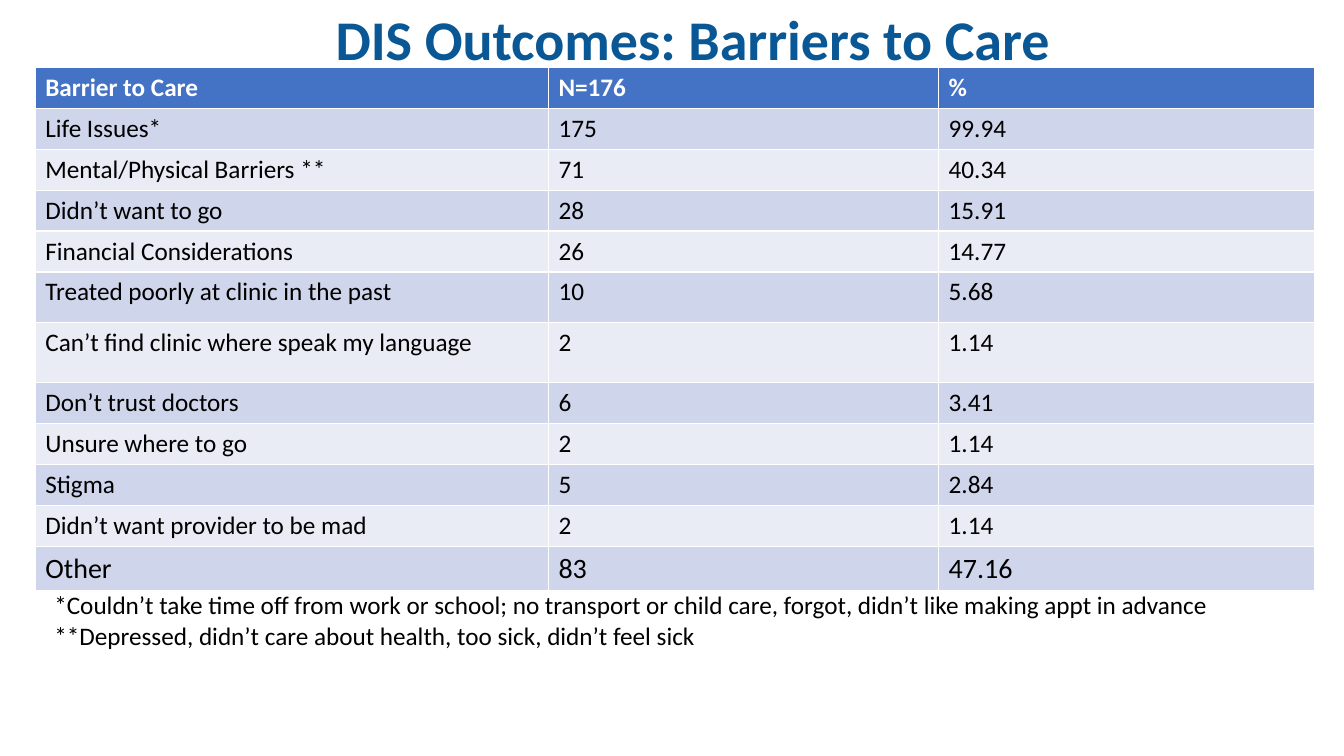
from pptx import Presentation
from pptx.dml.color import RGBColor
from pptx.enum.text import MSO_ANCHOR, MSO_AUTO_SIZE, PP_ALIGN
from pptx.util import Pt

PX = 9144  # EMU per px, 100 px to the inch


def box(*sides):
    """Turn px lengths into EMU."""
    return [side * PX for side in sides]


def style(para, size, color, bold=False):
    look = {"name": "Calibri", "size": Pt(size), "bold": bold}
    for key, value in look.items():
        setattr(para.font, key, value)
    para.font.color.rgb = RGBColor.from_string(color)


rows = [
    ("Barrier to Care", "N=176", "%"),
    ("Life Issues*", "175", "99.94"),
    ("Mental/Physical Barriers **", "71", "40.34"),
    ("Didn’t want to go", "28", "15.91"),
    ("Financial Considerations", "26", "14.77"),
    ("Treated poorly at clinic in the past", "10", "5.68"),
    ("Can’t find clinic where speak my language", "2", "1.14"),
    ("Don’t trust doctors", "6", "3.41"),
    ("Unsure where to go", "2", "1.14"),
    ("Stigma", "5", "2.84"),
    ("Didn’t want provider to be mad", "2", "1.14"),
    ("Other", "83", "47.16"),
]
widths = [509, 387, 373]
tall = {5: 50, 6: 60, 11: 41}
last = len(rows) - 1
notes = [
    "*Couldn’t take time off from work or school; no transport or child care, "
    "forgot, didn’t like making appt in advance",
    "**Depressed, didn’t care about health, too sick, didn’t feel sick",
]

deck = Presentation()
deck.slide_width, deck.slide_height = box(1333, 750)
slide = deck.slides.add_slide(deck.slide_layouts[5])

# Title
title = slide.shapes.title
title.left, title.top, title.width, title.height = box(112, -3, 1150, 91)
frame = title.text_frame
frame.text = "DIS Outcomes: Barriers to Care"
frame.auto_size = MSO_AUTO_SIZE.NONE
frame.vertical_anchor = MSO_ANCHOR.MIDDLE
head = frame.paragraphs[0]
head.alignment = PP_ALIGN.CENTER
head.line_spacing = 0.9
style(head, 40, "095895", True)

# Table, kept behind the title
grid = slide.shapes.add_table(len(rows), 3, *box(35, 67, sum(widths), 514))
title.element.addprevious(grid.element)
table = grid.table
for col, width in zip(table.columns, widths):
    col.width = width * PX
for r, row in enumerate(rows):
    table.rows[r].height = tall.get(r, 38) * PX
    fill = "4472C4" if r == 0 else ("E9EBF5", "CFD5EA")[r % 2]
    for c, text in enumerate(row):
        cell = table.cell(r, c)
        cell.text = text
        cell.fill.solid()
        cell.fill.fore_color.rgb = RGBColor.from_string(fill)
        style(cell.text_frame.paragraphs[0], 20 if r == last else 18,
              "000000" if r else "FFFFFF", r == 0)

# Footnotes
foot = slide.shapes.add_textbox(*box(44, 580, 1250, 71)).text_frame
foot.word_wrap = True
foot.text = "\n".join(notes)
for para in foot.paragraphs:
    style(para, 18, "000000")

deck.save("out.pptx")
